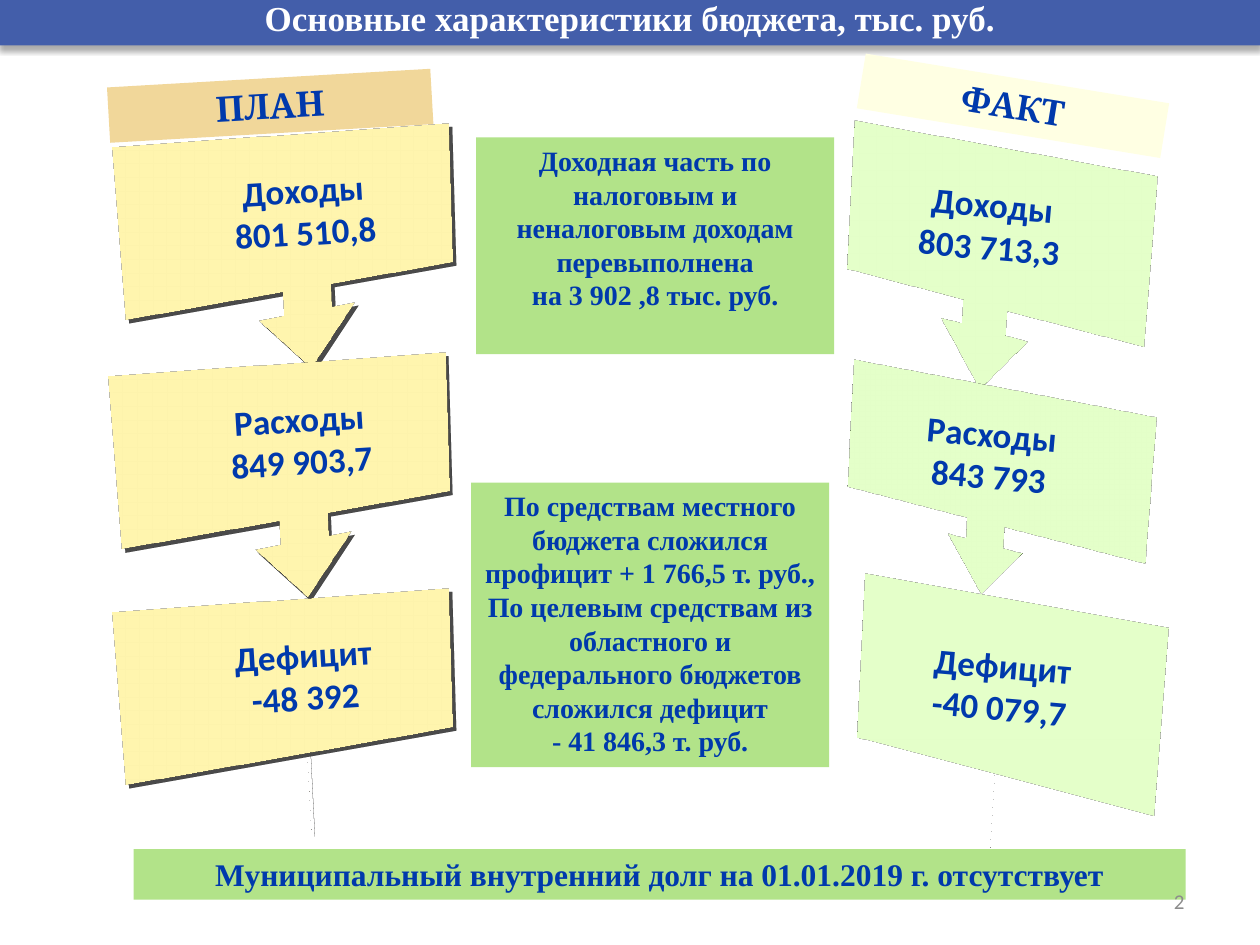
from dataclasses import dataclass

import pptx
import pptx.dml.color
import pptx.enum.shapes
import pptx.enum.text
import pptx.oxml
import pptx.oxml.ns
import pptx.util

Inches, Pt = pptx.util.Inches, pptx.util.Pt
SHAPE = pptx.enum.shapes.MSO_SHAPE
ALIGN = pptx.enum.text.PP_ALIGN
ANCHOR = pptx.enum.text.MSO_ANCHOR
NAVY, GREEN, SERIF = "0039AC", "B2E389", "Times New Roman"


@dataclass
class Column:
    fill: str
    line: str | None
    camera: str
    shadow: bool


@dataclass
class Callout:
    column: Column
    at: tuple[float, float, float, float]
    lines: list[str]
    adjustments: tuple[float, ...] = ()


@dataclass
class Label:
    at: tuple[float, float, float, float]
    lines: list[str]
    size: int
    fill: str = GREEN
    font: str = SERIF
    rotation: float = 0


PLAN = Column("FFE39D", None, "perspectiveHeroicExtremeRightFacing", True)
FACT = Column("CCEDB1", "5E9B2C", "perspectiveContrastingLeftFacing", False)

CALLOUTS = [
    Callout(PLAN, (0.86, 1.06, 3.15, 1.88), ["Доходы", "801 510,8"]),
    Callout(FACT, (6.18, 1.15, 3.31, 1.96), ["Доходы", "803 713,3"]),
    Callout(FACT, (6.18, 3.06, 3.31, 1.68), ["Расходы", "843 793"]),
    Callout(FACT, (6.26, 4.74, 3.31, 2.1), ["Дефицит", "-40 079,7"], (0, 0, 0.28, 0.67)),
    Callout(PLAN, (0.83, 2.88, 3.15, 1.88), ["Расходы", "849 903,7"]),
    Callout(PLAN, (0.86, 4.75, 3.15, 1.88), ["Дефицит", "-48 392"], (0.25, 0, 0.25, 0.65)),
]

LABELS = [
    Label((0.86, 0.62, 2.57, 0.44), ["ПЛАН"], 20, "F1D79A", "Cambria", 356.7),
    Label((6.82, 0.62, 2.44, 0.44), ["ФАКТ"], 20, "FFFFE3", "Cambria", 9.3),
    Label((3.74, 3.83, 2.84, 2.26), [
        "По средствам местного бюджета сложился профицит + 1 766,5 т. руб., "
        "По целевым средствам из областного и федерального бюджетов сложился дефицит",
        "- 41 846,3 т. руб."], 16),
    Label((3.78, 1.09, 2.84, 1.72), [
        "Доходная часть по налоговым и неналоговым доходам перевыполнена",
        "на 3 902 ,8 тыс. руб."], 16),
    Label((1.06, 6.74, 8.35, 0.4),
          ["Муниципальный внутренний долг на 01.01.2019 г. отсутствует"], 18),
]


def paint(color_format, value: str) -> None:
    color_format.rgb = pptx.dml.color.RGBColor.from_string(value)


def fill_solid(s, value: str) -> None:
    s.fill.solid()
    paint(s.fill.fore_color, value)


def place(s, at: tuple[float, float, float, float]) -> None:
    s.left, s.top, s.width, s.height = (Inches(v) for v in at)


def write(s, lines: list[str], size: int, font: str, color: str = NAVY,
          anchor=ANCHOR.TOP, align=ALIGN.CENTER, bold: bool = True) -> None:
    tf = s.text_frame
    tf.word_wrap = True
    tf.auto_size = pptx.enum.text.MSO_AUTO_SIZE.NONE
    tf.vertical_anchor = anchor
    for i, line in enumerate(lines):
        p = tf.paragraphs[0] if i == 0 else tf.add_paragraph()
        p.alignment = align
        r = p.add_run()
        r.text = line
        r.font.name, r.font.size, r.font.bold = font, Pt(size), bold
        paint(r.font.color, color)


def add_shadow(s, alpha: int, blur: float, distance: float, angle: int) -> None:
    s.shadow.inherit = False
    effects = s._element.spPr.find(pptx.oxml.ns.qn("a:effectLst"))
    effects.append(pptx.oxml.parse_xml(
        f'<a:outerShdw {pptx.oxml.ns.nsdecls("a")} blurRad="{Pt(blur)}" '
        f'dist="{Pt(distance)}" dir="{angle * 60000}" algn="tl" rotWithShape="0">'
        f'<a:srgbClr val="000000"><a:alpha val="{alpha * 1000}"/></a:srgbClr>'
        '</a:outerShdw>'))


def set_camera(s, preset: str) -> None:
    s._element.spPr.append(pptx.oxml.parse_xml(
        f'<a:scene3d {pptx.oxml.ns.nsdecls("a")}><a:camera prst="{preset}"/>'
        '<a:lightRig rig="threePt" dir="t"/></a:scene3d>'))


def add_box(slide, kind, at: tuple[float, float, float, float], fill: str):
    s = slide.shapes.add_shape(kind, *(Inches(v) for v in at))
    s.shadow.inherit = False
    fill_solid(s, fill)
    s.line.fill.background()
    return s


def add_callout(slide, item: Callout) -> None:
    column = item.column
    s = add_box(slide, SHAPE.DOWN_ARROW_CALLOUT, item.at, column.fill)
    for i, value in enumerate(item.adjustments):
        s.adjustments[i] = value
    if column.line:
        paint(s.line.color, column.line)
        s.line.width = Pt(1)
    if column.shadow:
        add_shadow(s, 45, 10, 3, 45)
    set_camera(s, column.camera)
    write(s, item.lines, 20, "Calibri", anchor=ANCHOR.MIDDLE)


def add_label(slide, item: Label) -> None:
    s = add_box(slide, SHAPE.RECTANGLE, item.at, item.fill)
    s.rotation = item.rotation
    write(s, item.lines, item.size, item.font)


def main() -> None:
    prs = pptx.Presentation()
    prs.slide_width, prs.slide_height = Inches(10), Inches(7.5)
    slide = prs.slides.add_slide(prs.slide_layouts[5])

    # Title band
    title = slide.shapes.title
    place(title, (0, -0.08, 10, 0.44))
    fill_solid(title, "435EAA")
    add_shadow(title, 32, 3.5, 2.2, 90)
    write(title, ["Основные характеристики бюджета, тыс. руб."], 20, SERIF, "FFFFFF")

    # Plan and fact columns
    for item in CALLOUTS:
        add_callout(slide, item)

    # Headings and notes
    for item in LABELS:
        add_label(slide, item)

    # Page number
    number = slide.shapes.add_textbox(*(Inches(v) for v in (7.17, 6.95, 2.33, 0.4)))
    write(number, ["2"], 12, "Calibri", "8C8C8C", ANCHOR.MIDDLE, ALIGN.RIGHT, False)

    prs.save("out.pptx")


if __name__ == "__main__":
    main()
